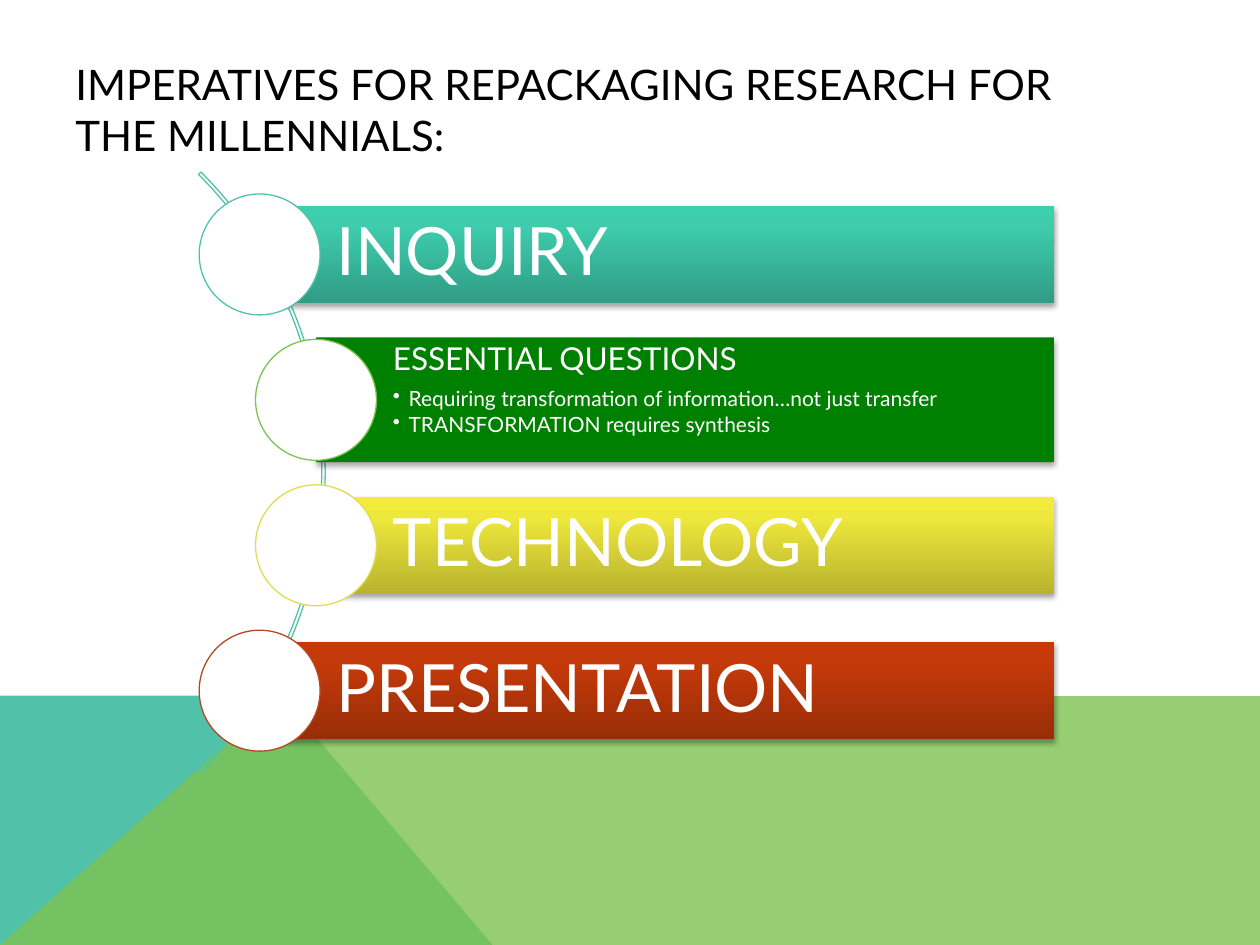
from dataclasses import dataclass

from lxml import etree
from pptx import Presentation
from pptx.dml.color import RGBColor
from pptx.enum import shapes, text
from pptx.oxml import ns
from pptx.util import Pt

FONT = "Lato"
WHITE, TEAL, GREEN = "FFFFFF", "51C2A9", "7EC251"
FIRST_CENTER, PITCH, DIAMETER = 145.4, 83.1, 69.1
BAR_RIGHT, TEXT_INSET = 602.2, 43.9


@dataclass
class Imperative:
    title: str
    left: float
    height: float
    size: float
    inset: float
    fills: tuple[str, ...]  # one colour, or stops from bottom to top
    ring: str
    points: tuple[str, ...] = ()


IMPERATIVES = [
    Imperative("INQUIRY", 148.4, 55.4, 38, 7.9, ("309D85", "3ECCAD", "3CD0AF"), TEAL),
    Imperative("ESSENTIAL QUESTIONS", 180.6, 71.3, 18, 3.6, ("008000",), GREEN,
               ("Requiring transformation of information…not just transfer",
                "TRANSFORMATION requires synthesis")),
    Imperative("TECHNOLOGY", 180.6, 55.4, 38, 7.9, ("B8B32E", "EFE83C", "F3ED39"), "E1DC53"),
    Imperative("PRESENTATION", 148.4, 55.4, 38, 7.9, ("982D08", "C53A0A", "C93907"), "B54721"),
]


def rgb(color: str) -> RGBColor:
    return RGBColor.from_string(color)


def child(parent, tag: str, **attrs):
    """Append a DrawingML element."""
    return etree.SubElement(parent, ns.qn(f"a:{tag}"), {k: str(v) for k, v in attrs.items()})


def add_color(parent, color: str, alpha: int | None = None) -> None:
    clr = child(parent, "srgbClr", val=color)
    if alpha is not None:
        child(clr, "alpha", val=alpha * 1000)


def fill_gradient(s, colors: tuple[str, ...]) -> None:
    """Fill upwards with stops at 0, 80 and 100 percent."""
    s.fill.gradient()
    grad = s._element.spPr.find(ns.qn("a:gradFill"))
    for old in list(grad):
        grad.remove(old)
    stops = child(grad, "gsLst")
    for pos, color in zip((0, 80, 100), colors):
        add_color(child(stops, "gs", pos=pos * 1000), color)
    child(grad, "lin", ang=270 * 60000, scaled=0)


def add_shadow(s) -> None:
    effects = s._element.spPr.find(ns.qn("a:effectLst"))
    shadow = child(effects, "outerShdw", blurRad=Pt(3.1), dist=Pt(1.8),
                   dir=90 * 60000, rotWithShape=0)
    add_color(shadow, "000000", 35)


def add_polygon(sl, points: list[tuple[float, float]], color: str,
                alpha: int | None = None) -> None:
    start, *rest = [(Pt(x), Pt(y)) for x, y in points]
    builder = sl.shapes.build_freeform(*start)
    builder.add_line_segments(rest, close=True)
    s = builder.convert_to_shape()
    s.shadow.inherit = False
    s.line.fill.background()
    s.fill.solid()
    s.fill.fore_color.rgb = rgb(color)
    if alpha is not None:
        clr = s._element.spPr.find(f".//{ns.qn('a:srgbClr')}")
        child(clr, "alpha", val=alpha * 1000)


def add_preset(sl, kind, left: float, top: float, width: float, height: float):
    s = sl.shapes.add_shape(kind, Pt(left), Pt(top), Pt(width), Pt(height))
    s.shadow.inherit = False
    return s


def set_outline(s, color: str) -> None:
    s.line.color.rgb = rgb(color)
    s.line.width = Pt(0.75)


def format_paragraph(p, size: float, color: str) -> None:
    p.alignment = text.PP_ALIGN.LEFT
    for r in p.runs:
        r.font.name = FONT
        r.font.size = Pt(size)
        r.font.color.rgb = rgb(color)


def add_title(sl, title: str) -> None:
    tf = sl.shapes.add_textbox(Pt(36), Pt(28.8), Pt(620.6), Pt(67)).text_frame
    tf.word_wrap = True
    tf.vertical_anchor = text.MSO_ANCHOR.MIDDLE
    tf.text = title
    format_paragraph(tf.paragraphs[0], 24, "000000")


def add_arc(sl) -> None:
    s = add_preset(sl, shapes.MSO_SHAPE.BLOCK_ARC, -298.8, 27.4, 484.6, 484.6)
    for i, value in enumerate((189, 27, 0.004)):
        s.adjustments[i] = value
    s.fill.background()
    set_outline(s, TEAL)


def write_bar(tf, item: Imperative) -> None:
    tf.word_wrap = True
    tf.vertical_anchor = text.MSO_ANCHOR.TOP if item.points else text.MSO_ANCHOR.MIDDLE
    tf.margin_left = Pt(TEXT_INSET)
    tf.margin_top = tf.margin_right = tf.margin_bottom = Pt(item.inset)
    tf.text = "\n".join((item.title, *item.points))
    for i, p in enumerate(tf.paragraphs):
        p.line_spacing = 0.9
        if i == 0:
            if item.points:
                p.space_after = Pt(6.3)
            format_paragraph(p, item.size, WHITE)
        else:
            p.level = 1
            p.space_after = Pt(1.8)
            pPr = p._p.get_or_add_pPr()
            pPr.set("marL", str(Pt(9)))
            pPr.set("indent", str(Pt(-9)))
            child(pPr, "buChar", char="•")
            format_paragraph(p, 12, WHITE)


def add_imperative(sl, item: Imperative, center: float) -> None:
    bar = add_preset(sl, shapes.MSO_SHAPE.RECTANGLE, item.left, center - item.height / 2,
                     BAR_RIGHT - item.left, item.height)
    if len(item.fills) > 1:
        fill_gradient(bar, item.fills)
    else:
        bar.fill.solid()
        bar.fill.fore_color.rgb = rgb(item.fills[0])
    bar.line.fill.background()
    add_shadow(bar)
    write_bar(bar.text_frame, item)

    circle = add_preset(sl, shapes.MSO_SHAPE.OVAL, item.left - DIAMETER / 2,
                        center - DIAMETER / 2, DIAMETER, DIAMETER)
    circle.fill.solid()
    circle.fill.fore_color.rgb = rgb(WHITE)
    set_outline(circle, item.ring)


def main() -> None:
    prs = Presentation()
    prs.slide_width, prs.slide_height = Pt(720), Pt(540)
    sl = prs.slides.add_slide(prs.slide_layouts[6])
    add_polygon(sl, [(0, 540), (0, 397.6), (160.6, 397.6), (281.5, 540)], TEAL)
    add_polygon(sl, [(0, 540), (160.6, 397.6), (720, 397.8), (720, 540)], GREEN, 80)
    add_title(sl, "IMPERATIVES FOR REPACKAGING RESEARCH FOR THE MILLENNIALS:")
    add_arc(sl)
    for i, item in enumerate(IMPERATIVES):
        add_imperative(sl, item, FIRST_CENTER + i * PITCH)
    prs.save("out.pptx")


if __name__ == "__main__":
    main()
